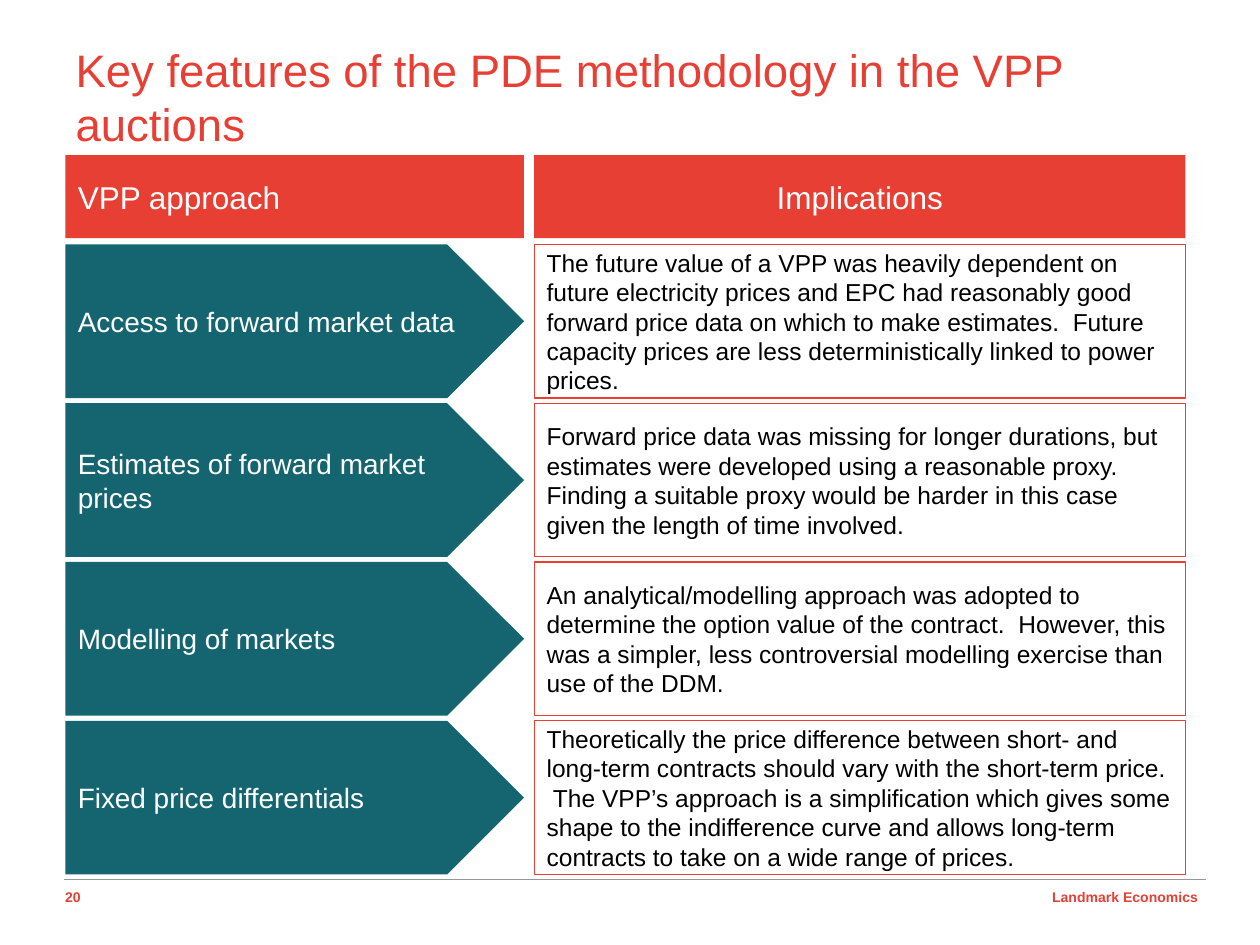
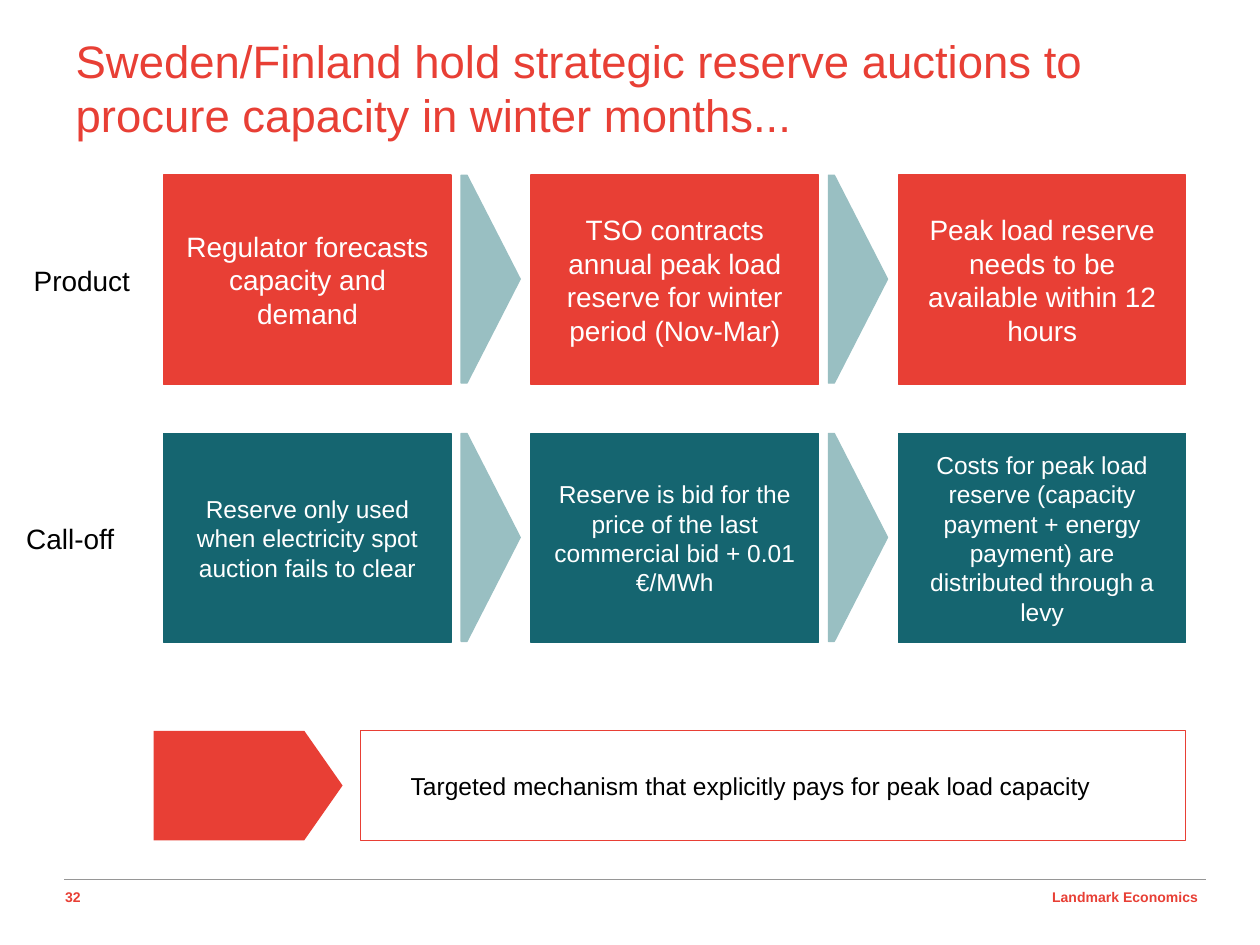
"""Build two slides on the auction methodology and the strategic reserve."""
import pptx
import pptx.dml.color
import pptx.enum.shapes
import pptx.enum.text
import pptx.oxml.ns
import pptx.util
from lxml import etree

Pt = pptx.util.Pt
SHAPES = pptx.enum.shapes.MSO_SHAPE
ALIGN = pptx.enum.text.PP_ALIGN
ANCHOR = pptx.enum.text.MSO_ANCHOR
AUTO_SIZE = pptx.enum.text.MSO_AUTO_SIZE

COLORS = {
    "red": "E83F35",
    "teal": "156570",
    "pale_teal": "99BFC2",
    "grey": "969696",
    "white": "FFFFFF",
    "black": "000000",
}
FONT = "Arial"
LINE_WIDTH = 0.75
RIGHT_EDGE = 677.5

APPROACHES = [
    (
        "Access to forward market data",
        "The future value of a VPP was heavily dependent on future electricity prices "
        "and EPC had reasonably good forward price data on which to make estimates.  "
        "Future capacity prices are less deterministically linked to power prices.",
    ),
    (
        "Estimates of forward market prices",
        "Forward price data was missing for longer durations, but estimates were "
        "developed using a reasonable proxy.  Finding a suitable proxy would be harder "
        "in this case given the length of time involved.",
    ),
    (
        "Modelling of markets",
        "An analytical/modelling approach was adopted to determine the option value of "
        "the contract.  However, this was a simpler, less controversial modelling "
        "exercise than use of the DDM.",
    ),
    (
        "Fixed price differentials",
        "Theoretically the price difference between short- and long-term contracts "
        "should vary with the short-term price.  The VPP’s approach is a simplification "
        "which gives some shape to the indifference curve and allows long-term "
        "contracts to take on a wide range of prices.",
    ),
]

PRODUCT_STEPS = [
    "Regulator forecasts capacity and demand",
    "TSO contracts annual peak load reserve for winter period (Nov-Mar)",
    "Peak load reserve needs to be available within 12 hours",
]
CALL_OFF_STEPS = [
    "Reserve only used when electricity spot auction fails to clear",
    "Reserve is bid for the price of the last commercial bid + 0.01 €/MWh",
    "Costs for peak load reserve (capacity payment + energy payment) are "
    "distributed through a levy",
]


def rgb(name):
    """Return the named colour."""
    return pptx.dml.color.RGBColor.from_string(COLORS[name])


def write_text(shape, text, size, color, align=ALIGN.LEFT, bold=False, spacing=0):
    """Set one paragraph of text, with spacing as a share of the text size."""
    shape.text_frame.text = text
    paragraph = shape.text_frame.paragraphs[0]
    paragraph.alignment = align
    paragraph.space_before = paragraph.space_after = Pt(size * spacing)
    font = paragraph.runs[0].font
    font.name = FONT
    font.size = Pt(size)
    font.bold = bold
    font.color.rgb = rgb(color)


def add_block(slide, kind, left, top, width, height, fill=None, line=None):
    """Add a preset shape with a plain fill and an optional outline."""
    shape = slide.shapes.add_shape(kind, Pt(left), Pt(top), Pt(width), Pt(height))
    shape.shadow.inherit = False
    if fill:
        shape.fill.solid()
        shape.fill.fore_color.rgb = rgb(fill)
    else:
        shape.fill.background()
    if line:
        shape.line.color.rgb = rgb(line)
        shape.line.width = Pt(LINE_WIDTH)
    else:
        shape.line.fill.background()
    shape.text_frame.word_wrap = True
    shape.text_frame.vertical_anchor = ANCHOR.MIDDLE
    return shape


def add_label(slide, text, left, top, width, height, size, color, wrap=False, **style):
    """Add a text box without fill."""
    box = slide.shapes.add_textbox(Pt(left), Pt(top), Pt(width), Pt(height))
    box.text_frame.word_wrap = wrap
    write_text(box, text, size, color, **style)


def add_footer(slide, number):
    """Add the rule, the page number and the firm name."""
    rule = slide.shapes.add_connector(
        pptx.enum.shapes.MSO_CONNECTOR.STRAIGHT, Pt(36.7), Pt(502.6), Pt(689), Pt(502.6)
    )
    rule.line.color.rgb = rgb("grey")
    rule.line.width = Pt(LINE_WIDTH)
    properties = rule._element.spPr
    etree.SubElement(properties, pptx.oxml.ns.qn("a:effectLst"))
    add_label(slide, str(number), 30.2, 504, 26.6, 18, 8, "red", bold=True)
    add_label(slide, "Landmark Economics", 518.4, 504, 173.4, 16.6, 8, "red",
              wrap=True, bold=True, align=ALIGN.RIGHT)


def add_titled_slide(presentation, title_text, title_top, number):
    """Add a title-only slide with its title and footer."""
    slide = presentation.slides.add_slide(presentation.slide_layouts[5])
    title = slide.shapes.title
    title.left, title.top, title.width, title.height = (
        Pt(36), Pt(title_top), Pt(653.8), Pt(54)
    )
    title.text_frame.word_wrap = True
    title.text_frame.auto_size = AUTO_SIZE.NONE
    title.text_frame.vertical_anchor = ANCHOR.TOP
    write_text(title, title_text, 26, "red")
    add_footer(slide, number)
    return slide


def add_approach_slide(presentation):
    """Add the two-column slide of approaches and implications."""
    slide = add_titled_slide(
        presentation, "Key features of the PDE methodology in the VPP auctions", 20.2, 20
    )
    approach = (37.4, 262.1)
    implication = (305.3, RIGHT_EDGE - 305.3)
    headers = [
        ("VPP approach", approach, ALIGN.LEFT),
        ("Implications", implication, ALIGN.CENTER),
    ]
    for text, (left, width), align in headers:
        header = add_block(slide, SHAPES.RECTANGLE, left, 88.6, width, 47.5, "red")
        write_text(header, text, 18, "white", align)
    height, pitch = 87.8, 90.72
    for row, (name, consequence) in enumerate(APPROACHES):
        top = 139.7 + row * pitch
        arrow = add_block(slide, SHAPES.PENTAGON, approach[0], top, approach[1],
                          height, "teal")
        write_text(arrow, name, 16, "white")
        panel = add_block(slide, SHAPES.RECTANGLE, implication[0], top,
                          implication[1], height, "white", "red")
        write_text(panel, consequence, 14, "black", spacing=0.2)


def add_process_row(slide, steps, top, color, size):
    """Add a row of step boxes joined by pale arrows."""
    left, width, pitch = 93.6, 164.2, 209.9
    for column, text in enumerate(steps):
        step_left = left + column * pitch
        step = add_block(slide, SHAPES.RECTANGLE, step_left, top, width, 119.5,
                         color, color)
        write_text(step, text, size, "white", ALIGN.CENTER, spacing=0.2)
        if column < len(steps) - 1:
            arrow = add_block(slide, SHAPES.PENTAGON, step_left + 169.9, top,
                              33.8, 118.8, "pale_teal", "pale_teal")
            arrow.adjustments[0] = 0.9


def add_reserve_slide(presentation):
    """Add the slide of the strategic reserve process."""
    slide = add_titled_slide(
        presentation,
        "Sweden/Finland hold strategic reserve auctions to procure capacity "
        "in winter months...",
        15.1,
        32,
    )
    add_process_row(slide, PRODUCT_STEPS, 100.1, "red", 16)
    add_process_row(slide, CALL_OFF_STEPS, 247.7, "teal", 14)
    add_label(slide, "Product", 12.2, 146.9, 70.6, 26.6, 16, "black", spacing=0.2)
    add_label(slide, "Call-off", 7.9, 294.5, 65.5, 26.6, 16, "black", spacing=0.2)

    summary_top, summary_height = 417.6, 62.6
    summary = add_block(slide, SHAPES.RECTANGLE, 205.9, summary_top,
                        RIGHT_EDGE - 205.9, summary_height, line="red")
    summary.text_frame.margin_left = Pt(28.8)
    write_text(summary, "Targeted mechanism that explicitly pays for peak load capacity",
               14, "black", spacing=0.2)
    pointer = add_block(slide, SHAPES.PENTAGON, 87.8, summary_top, 108,
                        summary_height, "red")
    pointer.adjustments[0] = 0.35


def main():
    """Build and save the presentation."""
    presentation = pptx.Presentation()
    presentation.slide_width = Pt(720)
    presentation.slide_height = Pt(540)
    add_approach_slide(presentation)
    add_reserve_slide(presentation)
    presentation.save("out.pptx")


if __name__ == "__main__":
    main()
